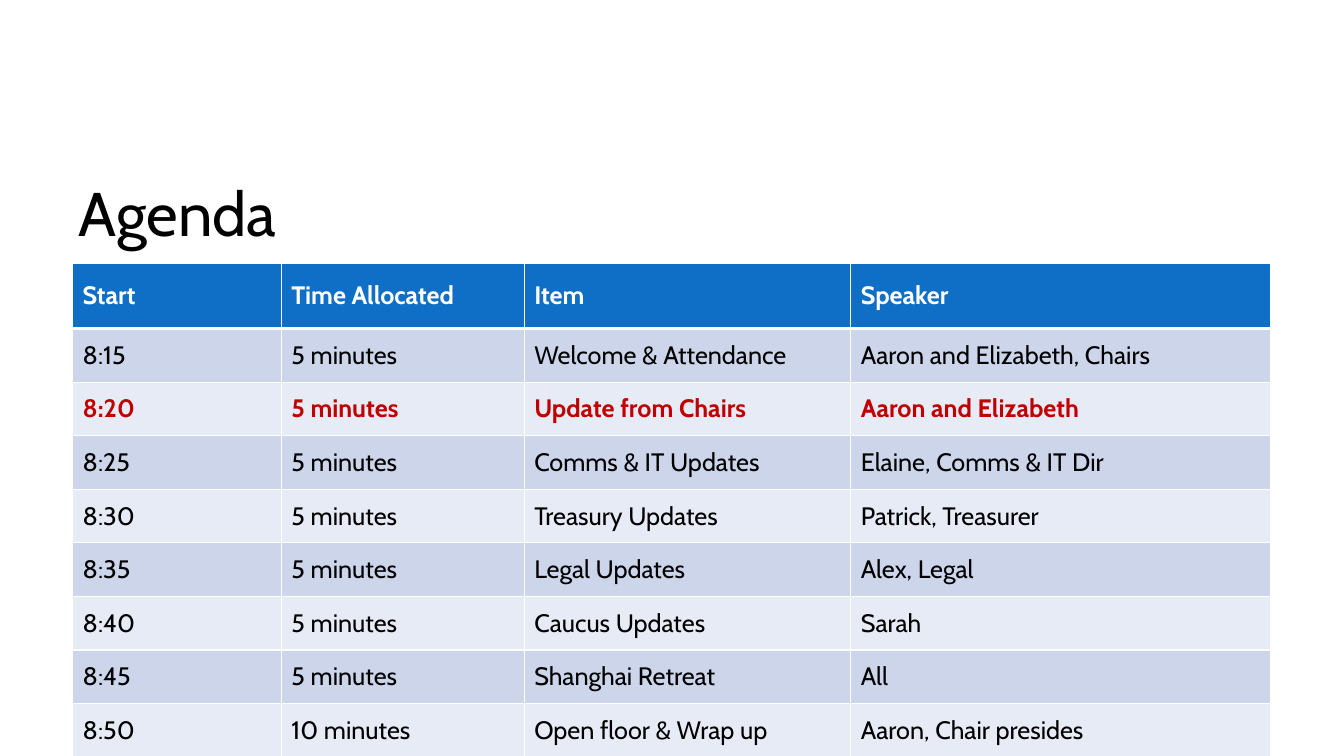
import pptx
import pptx.util
import pptx.dml.color
import pptx.enum.text
import pptx.oxml
import pptx.oxml.ns
from pptx.util import Cm

FONT = "Cabin"
WHITE = "FFFFFF"
BLACK = "000000"
RED = "C00000"
HEADER_BLUE = "0F6FC6"
BANDS = ["CCD5EA", "E7EBF5"]
COLUMN_WIDTHS = [5.26, 6.12, 8.23, 10.59]
HEADER_HEIGHT = 1.65
ITEM_HEIGHT = 1.35
CURRENT_START = "8:20"
HEADINGS = ("Start", "Time Allocated", "Item", "Speaker")
AGENDA = [
    ("8:15", "5 minutes", "Welcome & Attendance", "Aaron and Elizabeth, Chairs"),
    ("8:20", "5 minutes", "Update from Chairs", "Aaron and Elizabeth"),
    ("8:25", "5 minutes", "Comms & IT Updates", "Elaine, Comms & IT Dir"),
    ("8:30", "5 minutes", "Treasury Updates", "Patrick, Treasurer"),
    ("8:35", "5 minutes", "Legal Updates", "Alex, Legal"),
    ("8:40", "5 minutes", "Caucus Updates", "Sarah"),
    ("8:45", "5 minutes", "Shanghai Retreat", "All"),
    ("8:50", "10 minutes", "Open floor & Wrap up", "Aaron, Chair presides"),
]


def rgb(color):
    return pptx.dml.color.RGBColor.from_string(color)


def format_text(text_frame, size, color, bold=False):
    for paragraph in text_frame.paragraphs:
        for run in paragraph.runs:
            run.font.name = FONT
            run.font.size = pptx.util.Pt(size)
            run.font.bold = bold
            run.font.color.rgb = rgb(color)


def set_borders(cell, top, bottom):
    properties = cell._tc.get_or_add_tcPr()
    widths = {"lnL": 1, "lnR": 1, "lnT": top, "lnB": bottom}
    for position, (side, width) in enumerate(widths.items()):
        border = pptx.oxml.parse_xml(
            f'<a:{side} {pptx.oxml.ns.nsdecls("a")} w="{pptx.util.Pt(width)}">'
            f'<a:solidFill><a:srgbClr val="{WHITE}"/></a:solidFill></a:{side}>'
        )
        properties.insert(position, border)


def add_title(slide, text):
    title = slide.shapes.title
    title.left, title.top = Cm(1.73), Cm(3.61)
    title.width, title.height = Cm(26.44), Cm(3.68)
    title.text_frame.text = text
    title.text_frame.vertical_anchor = pptx.enum.text.MSO_ANCHOR.MIDDLE
    heading = title.text_frame.paragraphs[0]
    heading.alignment = pptx.enum.text.PP_ALIGN.LEFT
    heading.line_spacing = 0.9
    format_text(title.text_frame, 44, BLACK)


def fill_row(row, entries, fill, color, bold, top=1, bottom=1):
    for cell, entry in zip(row.cells, entries):
        cell.text_frame.text = entry
        cell.vertical_anchor = pptx.enum.text.MSO_ANCHOR.MIDDLE
        cell.fill.solid()
        cell.fill.fore_color.rgb = rgb(fill)
        format_text(cell.text_frame, 18, color, bold)
        set_borders(cell, top, bottom)


def add_agenda(slide):
    height = HEADER_HEIGHT + ITEM_HEIGHT * len(AGENDA)
    agenda = slide.shapes.add_table(
        len(AGENDA) + 1, len(HEADINGS),
        Cm(1.83), Cm(6.63), Cm(sum(COLUMN_WIDTHS)), Cm(height),
    ).table
    for column, width in zip(agenda.columns, COLUMN_WIDTHS):
        column.width = Cm(width)
    agenda.rows[0].height = Cm(HEADER_HEIGHT)
    fill_row(agenda.rows[0], HEADINGS, HEADER_BLUE, WHITE, True, bottom=3)
    for index, entries in enumerate(AGENDA):
        row = agenda.rows[index + 1]
        row.height = Cm(ITEM_HEIGHT)
        current = entries[0] == CURRENT_START
        fill_row(row, entries, BANDS[index % 2], RED if current else BLACK,
                 current, top=3 if index == 0 else 1)


def main():
    presentation = pptx.Presentation()
    presentation.slide_width = Cm(33.87)
    presentation.slide_height = Cm(19.05)
    slide = presentation.slides.add_slide(presentation.slide_layouts[5])
    slide.background.fill.solid()
    slide.background.fill.fore_color.rgb = rgb(WHITE)
    add_title(slide, "Agenda")
    add_agenda(slide)
    presentation.save("out.pptx")


if __name__ == "__main__":
    main()
